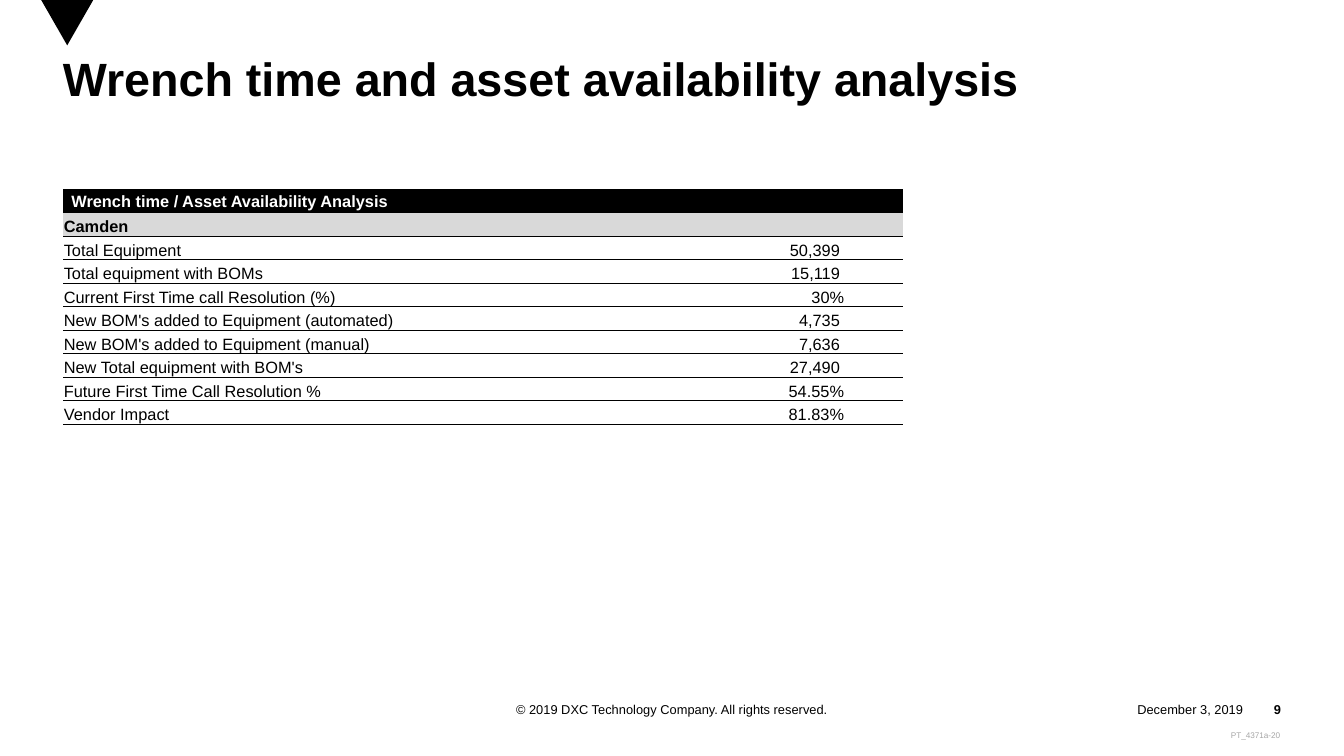
from lxml.etree import SubElement
from pptx import Presentation
from pptx.dml.color import RGBColor
from pptx.enum.text import MSO_ANCHOR, PP_ALIGN
from pptx.oxml.ns import qn
from pptx.util import Inches, Pt

BLACK = RGBColor(0x00, 0x00, 0x00)
WHITE = RGBColor(0xFF, 0xFF, 0xFF)
LIGHT_GREY = RGBColor(0xD9, 0xD9, 0xD9)
MID_GREY = RGBColor(0xA6, 0xA6, 0xA6)
FONT = "Arial"

TITLE = "Wrench time and asset availability analysis"
TABLE_HEADING = "Wrench time / Asset Availability Analysis"
SITE = "Camden"
MEASURES = [
    ("Total Equipment", "50,399"),
    ("Total equipment with BOMs", "15,119"),
    ("Current First Time call Resolution (%)", "30%"),
    ("New BOM's added to Equipment (automated)", "4,735"),
    ("New BOM's added to Equipment (manual)", "7,636"),
    ("New Total equipment with BOM's", "27,490"),
    ("Future First Time Call Resolution %", "54.55%"),
    ("Vendor Impact", "81.83%"),
]
COLUMN_WIDTHS = (7.03, 2.97)
ROW_HEIGHT = 0.28

# text, (left, top, width, height), size, bold, colour, alignment, anchor
TEXTS = [
    (TITLE, (0.75, 0.7, 14.5, 1.55), 40, True, BLACK, PP_ALIGN.LEFT, MSO_ANCHOR.TOP),
    ("© 2019 DXC Technology Company. All rights reserved.", (5.25, 8.29, 5.5, 0.3),
     11, False, BLACK, PP_ALIGN.CENTER, MSO_ANCHOR.MIDDLE),
    ("December 3, 2019", (13.01, 8.29, 1.79, 0.3),
     11, False, BLACK, PP_ALIGN.RIGHT, MSO_ANCHOR.MIDDLE),
    ("9", (14.8, 8.29, 0.45, 0.3), 11, True, BLACK, PP_ALIGN.RIGHT, MSO_ANCHOR.MIDDLE),
    ("PT_4371a-20", (13.01, 8.7, 2.23, 0.12),
     7, False, MID_GREY, PP_ALIGN.RIGHT, MSO_ANCHOR.TOP),
]


def style_paragraph(para, size, bold, color, alignment):
    para.alignment = alignment
    para.font.name = FONT
    para.font.size = Pt(size)
    para.font.bold = bold
    para.font.color.rgb = color


def add_text(slide, text, place, size, bold, color, alignment, anchor):
    box = slide.shapes.add_textbox(*map(Inches, place))
    frame = box.text_frame
    frame.word_wrap = True
    frame.vertical_anchor = anchor
    frame.margin_left = frame.margin_right = frame.margin_top = frame.margin_bottom = 0
    frame.text = text
    style_paragraph(frame.paragraphs[0], size, bold, color, alignment)
    if text == TITLE:
        frame.paragraphs[0].line_spacing = 0.85


def set_borders(cell):
    """Rule the cell above and below, with open sides."""
    properties = cell._tc.get_or_add_tcPr()
    for index, side in enumerate("LRTB"):
        line = SubElement(properties, qn(f"a:ln{side}"), w=str(Pt(0.5)))
        if side in "LR":
            SubElement(line, qn("a:noFill"))
        else:
            fill = SubElement(line, qn("a:solidFill"))
            SubElement(fill, qn("a:srgbClr"), val=str(BLACK))
        properties.insert(index, line)


def fill_cell(cell, text, margins, bold=False, color=BLACK, fill=None,
              alignment=PP_ALIGN.LEFT):
    cell.margin_left, cell.margin_top, cell.margin_right, cell.margin_bottom = map(
        Inches, margins)
    cell.vertical_anchor = MSO_ANCHOR.BOTTOM
    cell.text = text
    style_paragraph(cell.text_frame.paragraphs[0], 14, bold, color, alignment)
    if fill is None:
        cell.fill.background()
    else:
        cell.fill.solid()
        cell.fill.fore_color.rgb = fill
    set_borders(cell)


def add_analysis_table(slide):
    row_count = len(MEASURES) + 2
    table = slide.shapes.add_table(
        row_count, 2, Inches(0.75), Inches(2.25),
        Inches(sum(COLUMN_WIDTHS)), Inches(row_count * ROW_HEIGHT)).table
    table.first_row = table.horz_banding = False
    for column, width in zip(table.columns, COLUMN_WIDTHS):
        column.width = Inches(width)
    for row in table.rows:
        row.height = Inches(ROW_HEIGHT)

    label_margins = (0.01, 0.01, 0.01, 0)
    for column in range(2):
        fill_cell(table.cell(0, column), "" if column else TABLE_HEADING,
                  (0.1, 0.02, 0.02, 0.02), True, WHITE, BLACK)
        fill_cell(table.cell(1, column), "" if column else SITE,
                  label_margins, True, BLACK, LIGHT_GREY)
    table.cell(0, 0).merge(table.cell(0, 1))

    for row, (label, value) in enumerate(MEASURES, start=2):
        right = 0.7 if value.endswith("%") else 0.75
        fill_cell(table.cell(row, 0), label, label_margins)
        fill_cell(table.cell(row, 1), value, (0.01, 0.01, right, 0),
                  alignment=PP_ALIGN.RIGHT)


def add_marker(slide):
    """Draw the black triangle hanging from the top edge."""
    builder = slide.shapes.build_freeform(Inches(0.49), 0)
    builder.add_line_segments(
        [(Inches(0.8), Inches(0.54)), (Inches(1.11), 0)], close=True)
    marker = builder.convert_to_shape()
    marker.shadow.inherit = False
    marker.fill.solid()
    marker.fill.fore_color.rgb = BLACK
    marker.line.fill.background()


def main():
    deck = Presentation()
    deck.slide_width, deck.slide_height = Inches(16), Inches(9)
    slide = deck.slides.add_slide(deck.slide_layouts[6])
    add_marker(slide)
    for entry in TEXTS:
        add_text(slide, *entry)
    add_analysis_table(slide)
    deck.save("out.pptx")


if __name__ == "__main__":
    main()
